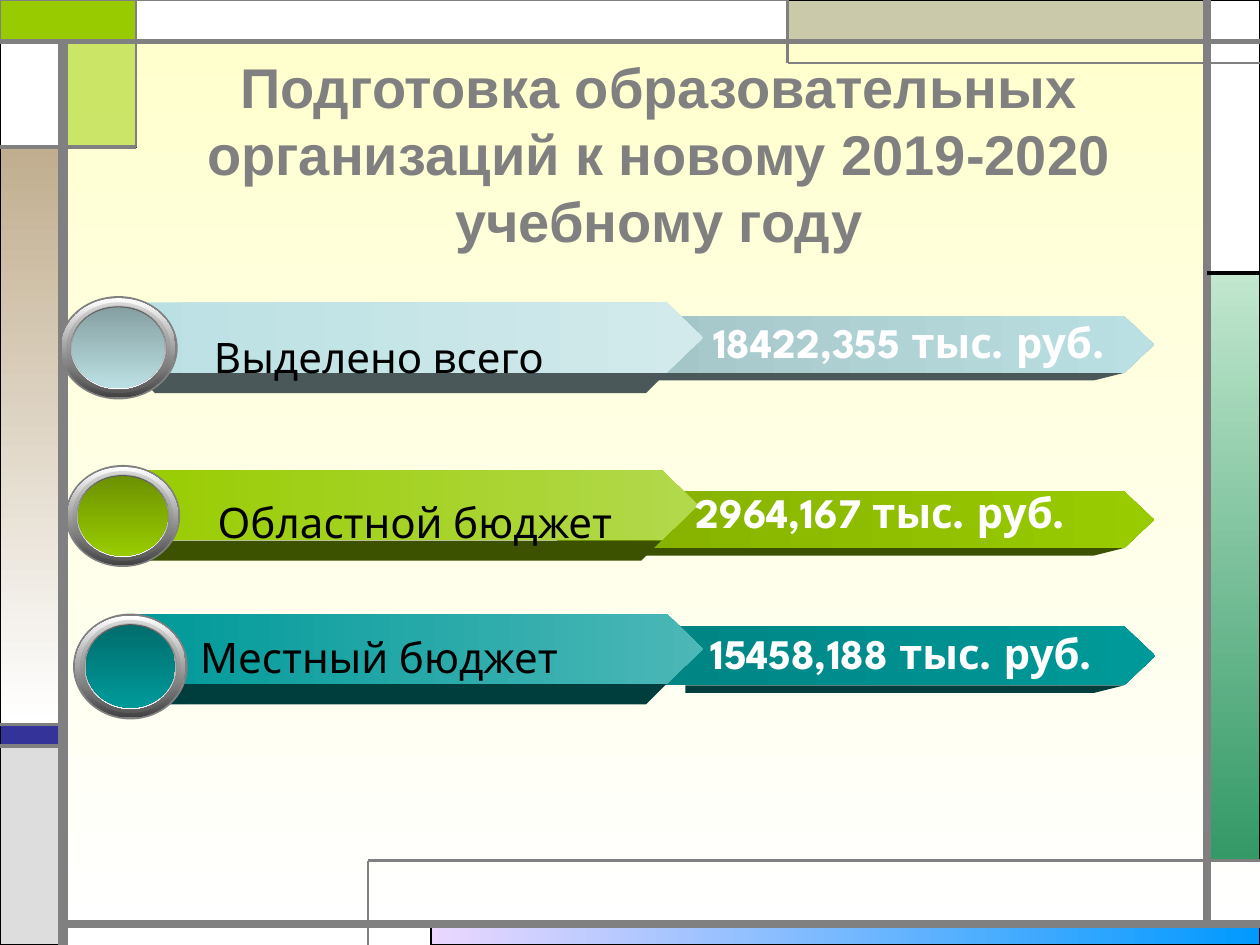
from lxml import etree
from pptx import Presentation
from pptx.dml.color import RGBColor
from pptx.enum.shapes import MSO_CONNECTOR, MSO_SHAPE
from pptx.enum.text import MSO_ANCHOR, PP_ALIGN
from pptx.oxml import parse_xml
from pptx.oxml.ns import qn
from pptx.util import Inches, Pt

RECT, OVAL = MSO_SHAPE.RECTANGLE, MSO_SHAPE.OVAL
CHEVRON, PLATE = MSO_SHAPE.CHEVRON, MSO_SHAPE.PENTAGON
STRAIGHT = MSO_CONNECTOR.STRAIGHT
MIDDLE, BOTTOM = MSO_ANCHOR.MIDDLE, MSO_ANCHOR.BOTTOM
CENTER, LEFT = PP_ALIGN.CENTER, PP_ALIGN.LEFT
NS = "http://schemas.openxmlformats.org/drawingml/2006/main"

BLACK, WHITE = RGBColor(0, 0, 0), RGBColor(255, 255, 255)
GRAY, SILVER = RGBColor(128, 128, 128), RGBColor(221, 221, 221)
CREAM, SAND = RGBColor(255, 255, 204), RGBColor(202, 201, 170)
TAN, NAVY = RGBColor(193, 174, 143), RGBColor(51, 51, 153)
LILAC, BLUE = RGBColor(235, 215, 255), RGBColor(0, 153, 255)
MINT, GREEN = RGBColor(193, 231, 206), RGBColor(51, 153, 102)
SMOKE, COAL = RGBColor(92, 92, 92), RGBColor(67, 67, 67)
LIME, TEAL, ICE = RGBColor(153, 204, 0), RGBColor(0, 153, 153), RGBColor(187, 224, 227)

TITLE = "Подготовка образовательных организаций к новому 2019-2020 учебному году"
ROWS = [
    dict(label="Выделено всего", sum="18422,355 тыс. руб.",
         tail=(4.33, 2.51, 4.83, 0.45), bar=(1.07, 2.4, 4.51, 0.56),
         knob=(0.47, 2.35, 0.94, 0.82), name=(1.6, 2.27, 3.8, 0.81),
         cash=(5.13, 2.46, 4.17, 0.5), main=ICE, light=RGBColor(210, 234, 236),
         dim=RGBColor(160, 192, 194), deep=RGBColor(134, 160, 162), base=RGBColor(74, 88, 89)),
    dict(label="Областной бюджет", sum="2964,167 тыс. руб.",
         tail=(4.36, 3.9, 4.8, 0.45), bar=(1.03, 3.73, 4.51, 0.56),
         knob=(0.52, 3.69, 0.91, 0.81), name=(1.63, 3.58, 3.67, 0.81),
         cash=(4.74, 3.81, 4.5, 0.5), main=LIME, light=RGBColor(178, 217, 76),
         dim=RGBColor(131, 174, 0), deep=RGBColor(109, 146, 0), base=RGBColor(61, 82, 0)),
    dict(label="Местный бюджет", sum="15458,188 тыс. руб.",
         tail=(4.94, 4.97, 4.23, 0.47), bar=(1.07, 4.87, 4.51, 0.56),
         knob=(0.58, 4.87, 0.91, 0.84), name=(1.49, 4.96, 3.49, 0.5),
         cash=(5.01, 4.93, 4.29, 0.5), main=TEAL, light=RGBColor(76, 183, 183),
         dim=RGBColor(0, 131, 131), deep=RGBColor(0, 109, 109), base=RGBColor(0, 61, 61)),
]

X = (0, 0.5, 1.08, 2.92, 3.42, 6.25, 9.58, 10)
Y = (0, 0.33, 0.5, 1.17, 2.17, 5.75, 5.92, 6.83, 7.33, 7.5)
PANELS = [
    (4, 8, 7, 9, (LILAC, BLUE, 0)), (6, 4, 7, 7, (MINT, GREEN, 270)),
    (0, 5, 1, 6, NAVY), (0, 6, 1, 9, SILVER), (6, 0, 7, 4, WHITE),
    (5, 0, 6, 1, SAND), (1, 1, 2, 3, (LIME, 50)), (0, 3, 1, 5, (TAN, WHITE, 270)),
    (0, 1, 1, 3, WHITE), (0, 0, 2, 1, LIME), (2, 0, 5, 1, WHITE),
]
EDGES = {(0, 0): (GRAY, 1.5), (2, 0): (GRAY, 0.75)}
RULES = [
    (1, 9, 1, 1, 6, GRAY), (1, 8, 7, 8, 4.5, GRAY), (6, 8, 6, 0, 4.5, GRAY),
    (0, 1, 7, 1, 3, GRAY), (7, 2, 5, 2, 1.5, GRAY), (5, 2, 5, 0, 1.5, GRAY),
    (6, 4, 7, 4, 2.25, BLACK), (2, 0, 2, 3, 1.5, GRAY), (2, 3, 0, 3, 2.25, GRAY),
    (3, 9, 3, 7, 1.5, GRAY), (3, 7, 7, 7, 1.5, GRAY), (1, 5, 0, 5, 2.25, GRAY),
    (1, 6, 0, 6, 2.25, GRAY),
]
RINGS = [(1, GRAY), (0.96, (WHITE, COAL, 270)), (0.88, (GRAY, 25)),
         (0.82, (GRAY, 30)), (0.8, (SMOKE, WHITE, 270))]

deck = Presentation()
deck.slide_width, deck.slide_height = Inches(10), Inches(7.5)
slide = deck.slides.add_slide(deck.slide_layouts[6])
shapes = slide.shapes


def blend(fill, first, last, angle):
    fill.gradient()
    fill.gradient_angle = angle
    for stop, tint in zip(fill.gradient_stops, (first, last)):
        stop.color.rgb = tint


def paint(shape, tint, edge=None):
    shape.shadow.inherit = False
    if isinstance(tint, RGBColor):
        shape.fill.solid()
        shape.fill.fore_color.rgb = tint
    elif len(tint) == 3:
        blend(shape.fill, *tint)
    else:
        paint(shape, tint[0])
        node = shape.fill._xPr.find(qn("a:solidFill"))[0]
        etree.SubElement(node, qn("a:alpha"), val=str(tint[1] * 1000))
    if edge:
        shape.line.color.rgb, shape.line.width = edge[0], Pt(edge[1])
    else:
        shape.line.fill.background()


def block(kind, box, tint, edge=None, adj=None):
    shape = shapes.add_shape(kind, *map(Inches, box))
    if adj:
        shape.adjustments[0] = adj
    paint(shape, tint, edge)


def facet(points, tint):
    dots = [(Inches(x), Inches(y)) for x, y in points]
    pen = shapes.build_freeform(*dots[0])
    pen.add_line_segments(dots[1:])
    paint(pen.convert_to_shape(), tint)


def write(text, box, look, align=CENTER, anchor=MIDDLE, shade=None):
    frame = shapes.add_textbox(*map(Inches, box)).text_frame
    frame.word_wrap, frame.vertical_anchor = True, anchor
    para = frame.paragraphs[0]
    para.alignment = align
    run = para.add_run()
    run.text = text
    look = dict(look)
    run.font.color.rgb = look.pop("tint")
    for key, value in look.items():
        setattr(run.font, key, value)
    if shade:
        glow = parse_xml(
            f'<a:effectLst xmlns:a="{NS}"><a:outerShdw dist="35921" dir="2700000">'
            f'<a:srgbClr val="{shade}"/></a:outerShdw></a:effectLst>')
        run.font._element.find(qn("a:solidFill")).addnext(glow)


blend(slide.background.fill, CREAM, WHITE, 270)
for a, b, c, d, tint in PANELS:
    box = X[a], Y[b], X[c] - X[a], Y[d] - Y[b]
    block(RECT, box, tint, EDGES.get((a, b), (BLACK, 0.75)))
for a, b, c, d, size, tint in RULES:
    ends = map(Inches, (X[a], Y[b], X[c], Y[d]))
    line = shapes.add_connector(STRAIGHT, *ends)
    line.line.color.rgb, line.line.width = tint, Pt(size)
    etree.SubElement(line._element.spPr, qn("a:effectLst"))

BOLD = dict(name="Arial", size=Pt(32), bold=True, tint=GRAY)
NAME = dict(name="League Spartan", size=Pt(24), tint=BLACK)
CASH = dict(NAME, bold=True, tint=WHITE)
write(TITLE, (0.98, 0.59, 8.5, 1.25), BOLD)

for row in ROWS:
    x, y, w, h = row["tail"]
    end, low = x + w - 0.53 * h, y + h
    facet([(x + 0.5, low), (end, low), (end - 0.24, low + 0.06), (x + 0.5, low + 0.06)], row["base"])
    block(CHEVRON, row["tail"], (row["dim"], row["main"], 0), adj=0.53)
    x, y, w, h = row["bar"]
    end, low = x + w - 0.52 * h, y + h
    facet([(x, low), (end, low), (end - 0.16, low + 0.16), (x + 0.16, low + 0.16)], row["base"])
    block(PLATE, row["bar"], (row["main"], row["light"], 0), adj=0.52)
    x, y, w, h = row["knob"]
    for part, tint in RINGS + [(0.78, (row["deep"], row["main"], 270))]:
        gap = (1 - part) / 2
        block(OVAL, (x + w * gap, y + h * gap, w * part, h * part), tint)
    write(row["label"], row["name"], NAME, LEFT, BOTTOM, BLACK)
    write(row["sum"], row["cash"], CASH, shade=row["base"])

deck.save("out.pptx")
